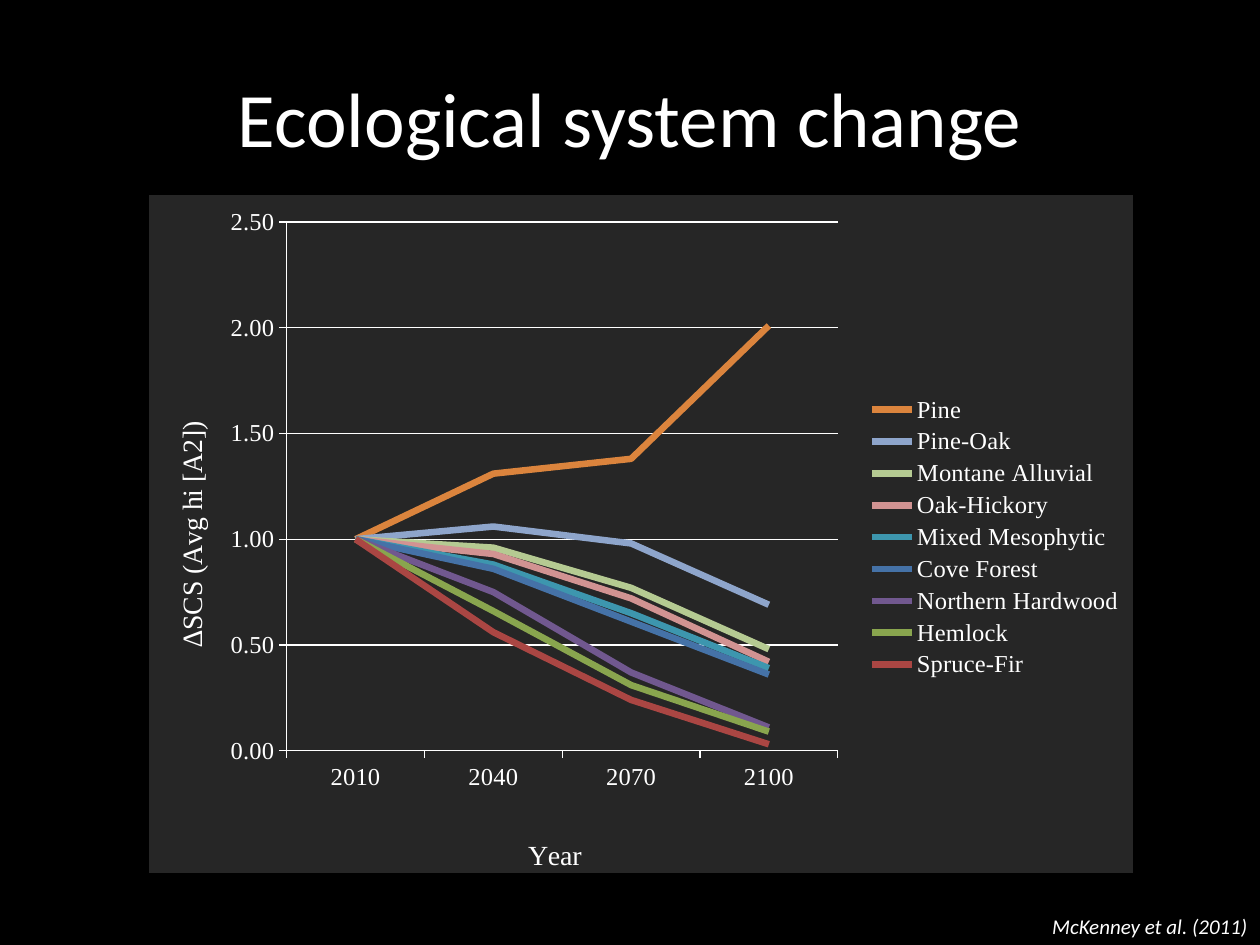
from lxml import etree
from pptx import Presentation
from pptx.chart.data import CategoryChartData
from pptx.dml.color import RGBColor
from pptx.enum.chart import XL_CHART_TYPE, XL_LEGEND_POSITION, XL_MARKER_STYLE, XL_TICK_MARK
from pptx.enum.text import MSO_ANCHOR, PP_ALIGN
from pptx.oxml import parse_xml
from pptx.oxml.ns import nsdecls, qn
from pptx.util import Emu, Pt

LINE = XL_CHART_TYPE.LINE
LEGEND_RIGHT = XL_LEGEND_POSITION.RIGHT
NO_MARKER = XL_MARKER_STYLE.NONE
TICK_OUTSIDE = XL_TICK_MARK.OUTSIDE
MIDDLE = MSO_ANCHOR.MIDDLE
CENTER, RIGHT = PP_ALIGN.CENTER, PP_ALIGN.RIGHT

YEARS = ["2010", "2040", "2070", "2100"]
ECOSYSTEMS = [
    ("Pine", "DB843D", (1, 1.31, 1.38, 2.01)),
    ("Pine-Oak", "8EA5CB", (1, 1.06, 0.98, 0.69)),
    ("Montane Alluvial", "B5CA92", (1, 0.96, 0.77, 0.48)),
    ("Oak-Hickory", "D19392", (1, 0.93, 0.72, 0.42)),
    ("Mixed Mesophytic", "3D96AE", (1, 0.88, 0.65, 0.39)),
    ("Cove Forest", "4572A7", (1, 0.86, 0.61, 0.36)),
    ("Northern Hardwood", "71588F", (1, 0.75, 0.37, 0.11)),
    ("Hemlock", "89A54E", (1, 0.66, 0.31, 0.09)),
    ("Spruce-Fir", "AA4643", (1, 0.56, 0.24, 0.03)),
]


def px(length):
    return Emu(round(length * 914400 / 126))


def color(value):
    return RGBColor.from_string(value)


class SlideBuilder:
    """Holds the style and the current slide, and adds its elements."""

    text_font = "Calibri"
    chart_font = "Times New Roman"
    foreground = "FFFFFF"
    background = "000000"
    panel = "262626"

    def __init__(self, presentation):
        self.slide = presentation.slides.add_slide(presentation.slide_layouts[5])
        fill = self.slide.background.fill
        fill.solid()
        fill.fore_color.rgb = color(self.background)

    def style_font(self, font, name, size):
        font.name, font.size, font.bold = name, Pt(size), False
        font.color.rgb = color(self.foreground)

    def style_line(self, line, line_color, width):
        line.color.rgb = color(line_color)
        line.width = Pt(width)

    def add_text(self, paragraph, text, name, size):
        run = paragraph.add_run()
        run.text = text
        self.style_font(run.font, name, size)
        return run

    def title(self, text, left, top, width, height):
        shape = self.slide.shapes.title
        shape.left, shape.top, shape.width, shape.height = map(px, (left, top, width, height))
        shape.text_frame.vertical_anchor = MIDDLE
        paragraph = shape.text_frame.paragraphs[0]
        paragraph.alignment = CENTER
        self.add_text(paragraph, text, self.text_font, 44)

    def credit(self, text, left, top, width, height):
        shape = self.slide.shapes.add_textbox(*map(px, (left, top, width, height)))
        shape.text_frame.word_wrap = True
        paragraph = shape.text_frame.paragraphs[0]
        paragraph.alignment = RIGHT
        self.add_text(paragraph, text, self.text_font, 12).font.italic = True

    def place(self, element, index, inner=False, **fractions):
        for layout in element.findall(qn("c:layout")):
            element.remove(layout)
        layout = etree.Element(qn("c:layout"))
        manual = etree.SubElement(layout, qn("c:manualLayout"))
        values = {"layoutTarget": "inner"} if inner else {}
        values.update(xMode="edge", yMode="edge", **fractions)
        for name, value in values.items():
            etree.SubElement(manual, qn("c:" + name)).set("val", str(value))
        element.insert(index, layout)

    def axis(self, axis, title, x, y):
        axis.major_tick_mark = TICK_OUTSIDE
        self.style_font(axis.tick_labels.font, self.chart_font, 14)
        self.style_line(axis.format.line, self.foreground, 0.75)
        axis_title = axis.axis_title
        self.add_text(axis_title.text_frame.paragraphs[0], title, self.chart_font, 16)
        self.place(axis_title.element, 1, x=x, y=y)

    def fill_panel(self, chart):
        properties = parse_xml(
            f'<c:spPr {nsdecls("c", "a")}><a:solidFill><a:srgbClr val="{self.panel}"/>'
            "</a:solidFill><a:ln><a:noFill/></a:ln></c:spPr>")
        chart.element.find(qn("c:chart")).addnext(properties)

    def line_chart(self, categories, rows, left, top, width, height):
        data = CategoryChartData(number_format="0.00")
        data.categories = categories
        for name, _, values in rows:
            data.add_series(name, values)
        frame = self.slide.shapes.add_chart(LINE, *map(px, (left, top, width, height)), data)
        chart = frame.chart
        chart.has_title = False
        self.style_font(chart.font, self.text_font, 10)
        self.fill_panel(chart)
        chart.plots[0].vary_by_categories = False
        for series, (_, line_color, _) in zip(chart.plots[0].series, rows):
            series.smooth = False
            series.marker.style = NO_MARKER
            self.style_line(series.format.line, line_color, 3.75)
        self.axis(chart.category_axis, "Year", 0.38, 0.94)
        value_axis = chart.value_axis
        self.axis(value_axis, "∆SCS (Avg hi [A2])", 0.02, 0.33)
        value_axis.minimum_scale, value_axis.maximum_scale = 0, 2.5
        value_axis.major_unit = 0.5
        value_axis.tick_labels.number_format = "0.00"
        value_axis.tick_labels.number_format_is_linked = False
        value_axis.has_major_gridlines = True
        self.style_line(value_axis.major_gridlines.format.line, self.foreground, 0.75)
        chart.has_legend = True
        chart.legend.position = LEGEND_RIGHT
        chart.legend.include_in_layout = False
        self.style_font(chart.legend.font, self.chart_font, 14)
        self.place(chart.element.find(".//" + qn("c:plotArea")), 0, inner=True,
                   x=0.14, y=0.04, w=0.56, h=0.78)
        self.place(chart.element.find(".//" + qn("c:legend")), 1,
                   x=0.73, y=0.29, w=0.26, h=0.43)


def main():
    presentation = Presentation()
    presentation.slide_width, presentation.slide_height = px(1260), px(945)
    builder = SlideBuilder(presentation)
    builder.title("Ecological system change", 63, 38, 1134, 157)
    builder.line_chart(YEARS, ECOSYSTEMS, 149, 195, 984, 685)
    builder.credit("McKenney et al. (2011)", 1028, 907, 232, 38)
    presentation.save("out.pptx")


if __name__ == "__main__":
    main()
